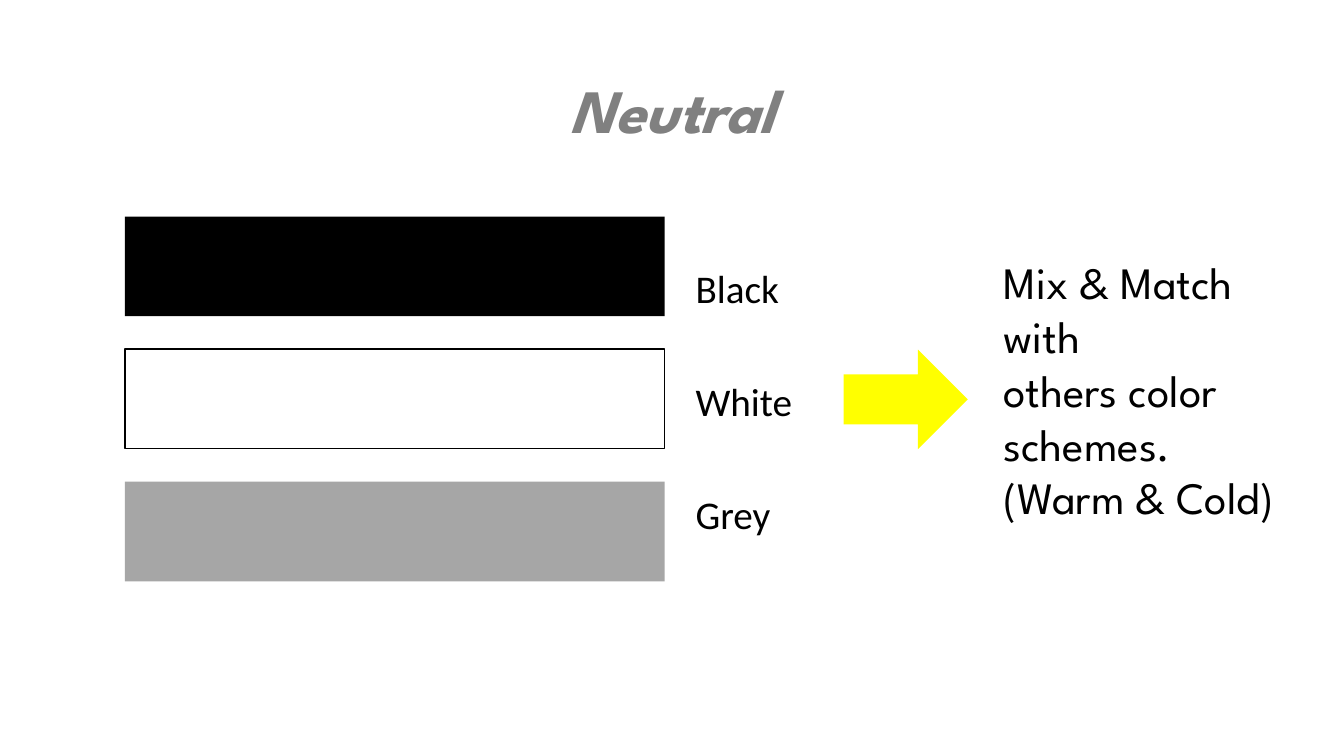
import pptx
import pptx.util
import pptx.dml.color
import pptx.enum.shapes
import pptx.enum.text
from pptx.util import Cm

SHAPES = pptx.enum.shapes.MSO_SHAPE
ALIGN = pptx.enum.text.PP_ALIGN
ANCHOR = pptx.enum.text.MSO_ANCHOR


def rgb(hex_string):
    return pptx.dml.color.RGBColor.from_string(hex_string)


def add_text(box, lines, font_format, paragraph_format, frame_format):
    """Add a wrapped text box at box (cm) with one paragraph per line."""
    frame = slide.shapes.add_textbox(*map(Cm, box)).text_frame
    frame.word_wrap = True
    for key, value in frame_format.items():
        setattr(frame, key, value)
    frame.text = "\n".join(lines)
    for paragraph in frame.paragraphs:
        for key, value in paragraph_format.items():
            setattr(paragraph, key, value)
        for run in paragraph.runs:
            run.font.color.rgb = rgb(font_format["color"])
            for key, value in font_format.items():
                if key != "color":
                    setattr(run.font, key, value)


deck = pptx.Presentation()
deck.slide_width, deck.slide_height = Cm(33.87), Cm(19.05)
slide = deck.slides.add_slide(deck.slide_layouts[6])

add_text(
    (2.33, 1.01, 29.21, 3.68), ["Neutral"],
    {"name": "League Spartan", "size": pptx.util.Pt(44), "bold": True,
     "italic": True, "color": "808080"},
    {"alignment": ALIGN.CENTER, "line_spacing": 0.9},
    {"vertical_anchor": ANCHOR.MIDDLE},
)

# Swatches and their labels run down the slide at two different pitches
swatch_top, swatch_pitch = 5.46, 3.34
label_top, label_pitch = 6.67, 2.84
neutrals = [("Black", "000000", None), ("White", "FFFFFF", "000000"), ("Grey", "A6A6A6", None)]
blocks = []
for row, (neutral, fill, outline) in enumerate(neutrals):
    blocks.append((SHAPES.RECTANGLE, (3.15, swatch_top + row * swatch_pitch, 13.6, 2.51),
                   fill, outline))
    add_text(
        (17.53, label_top + row * label_pitch, 3.5, 1.25), [neutral],
        {"name": "Calibri", "size": pptx.util.Pt(28), "color": "000000"},
        {"alignment": ALIGN.LEFT},
        {"margin_left": 0, "margin_right": 0, "margin_top": 0, "margin_bottom": 0},
    )
blocks.append((SHAPES.RIGHT_ARROW, (21.26, 8.81, 3.13, 2.51), "FFFF00", None))

for preset, box, fill, outline in blocks:
    block = slide.shapes.add_shape(preset, *map(Cm, box))
    block.shadow.inherit = False
    block.fill.solid()
    block.fill.fore_color.rgb = rgb(fill)
    if outline:
        block.line.color.rgb = rgb(outline)
        block.line.width = pptx.util.Pt(1)
    else:
        block.line.fill.background()

add_text(
    (25.04, 6.3, 7.8, 8.46),
    ["Mix & Match with", "others color schemes.", "(Warm & Cold)"],
    {"name": "League Spartan", "size": pptx.util.Pt(32), "color": "000000"},
    {"alignment": ALIGN.LEFT},
    {"auto_size": pptx.enum.text.MSO_AUTO_SIZE.SHAPE_TO_FIT_TEXT},
)

deck.save("out.pptx")
